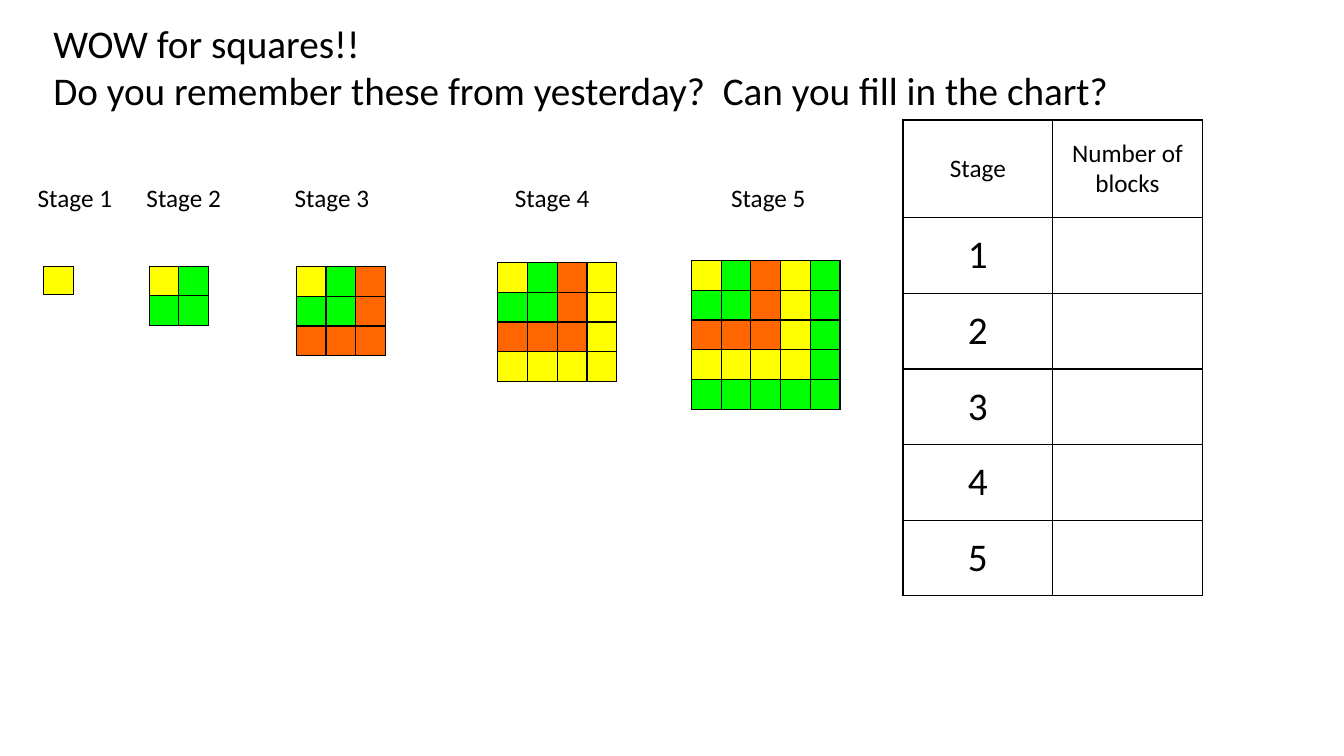
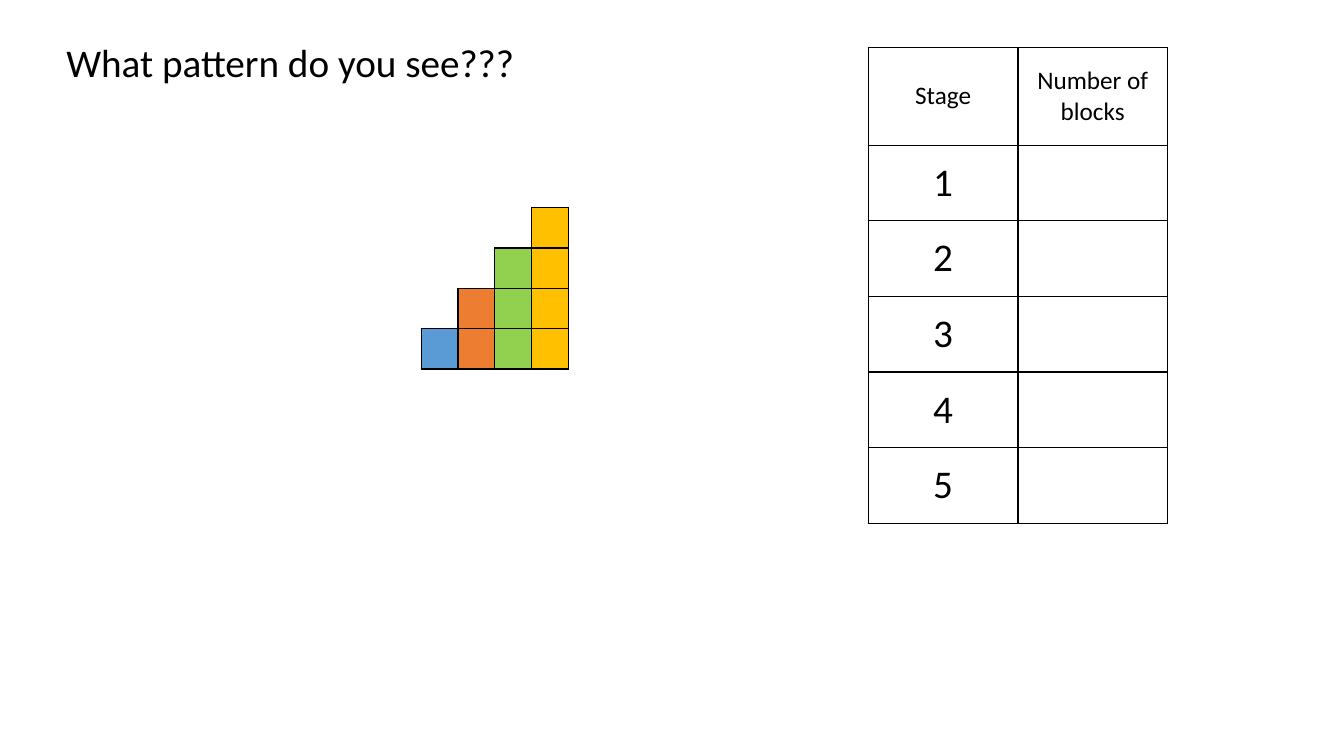
import lxml.etree
import pptx
import pptx.dml.color
import pptx.enum.shapes
import pptx.enum.text
import pptx.oxml.ns
import pptx.util

SCALE = 4572
HUES = {
    "ink": "000000",
    "yellow": "FFFF00",
    "green": "00FF00",
    "orange": "FF6600",
    "blue": "5B9BD5",
    "rust": "ED7D31",
    "lime": "92D050",
    "gold": "FFC000",
}
RINGS = ["yellow", "green", "orange", "yellow", "green"]
STEPS = ["blue", "rust", "lime", "gold"]
SIDE = 59


def px(n):
    return pptx.util.Emu(n * SCALE)


def hue(name):
    return pptx.dml.color.RGBColor.from_string(HUES[name])


def add(node, tag, **attrs):
    return lxml.etree.SubElement(node, pptx.oxml.ns.qn(tag), **attrs)


class Deck:
    font = "Calibri"
    large = 28
    small = 18

    def __init__(self):
        self.prs = pptx.Presentation()
        self.prs.slide_width = px(2667)
        self.prs.slide_height = px(1500)
        self.slide = None

    def page(self):
        self.slide = self.prs.slides.add_slide(self.prs.slide_layouts[6])

    def style(self, frame, size):
        for para in frame.paragraphs:
            for run in para.runs:
                run.font.name = self.font
                run.font.size = pptx.util.Pt(size)
                run.font.color.rgb = hue("ink")

    def text(self, x, y, w, h, words, size, tabs=()):
        box = self.slide.shapes.add_textbox(px(x), px(y), px(w), px(h))
        frame = box.text_frame
        frame.word_wrap = True
        frame.text = words
        self.style(frame, size)
        if tabs:
            stops = add(frame.paragraphs[0]._p.get_or_add_pPr(), "a:tabLst")
            for stop in tabs:
                add(stops, "a:tab", pos=str(px(stop)), algn="l")

    def title(self, x, y, h, words):
        self.text(x, y, 2150, h, words, self.large)

    def block(self, x, y, w, h, name):
        rect = pptx.enum.shapes.MSO_SHAPE.RECTANGLE
        shape = self.slide.shapes.add_shape(rect, px(x), px(y), px(w), px(h))
        shape.shadow.inherit = False
        shape.fill.solid()
        shape.fill.fore_color.rgb = hue(name)
        shape.line.color.rgb = hue("ink")
        shape.line.width = pptx.util.Pt(0.5)

    def table(self, x, y, cols, rows):
        frame = self.slide.shapes.add_table(
            len(rows), len(cols), px(x), px(y), px(sum(cols)), px(sum(rows)))
        table = frame.table
        table.first_row = False
        table.horz_banding = False
        for col, wide in zip(table.columns, cols):
            col.width = px(wide)
        for row, high in zip(table.rows, rows):
            row.height = px(high)
        for cell in table.iter_cells():
            self.edge(cell)
            cell.fill.background()
        return table

    def edge(self, cell):
        props = cell._tc.get_or_add_tcPr()
        for side in "LRTB":
            line = add(props, "a:ln" + side, w=str(pptx.util.Pt(1)))
            fill = add(line, "a:solidFill")
            add(fill, "a:srgbClr", val=HUES["ink"])

    def grid(self, x, y, wide, high, names):
        table = self.table(x, y, [wide] * len(names[0]), [high] * len(names))
        for r, row in enumerate(names):
            for c, name in enumerate(row):
                cell = table.cell(r, c)
                cell.margin_left = cell.margin_right = 0
                cell.margin_top = cell.margin_bottom = 0
                cell.fill.solid()
                cell.fill.fore_color.rgb = hue(name)
                add(cell.text_frame.paragraphs[0]._p, "a:endParaRPr", sz="800")

    def square(self, x, y, size):
        names = [[RINGS[max(r, c)] for c in range(size)] for r in range(size)]
        self.grid(x, y, SIDE, SIDE, names)

    def stairs(self, x, y, wide, high):
        for c, name in enumerate(STEPS):
            for r in range(c + 1):
                self.grid(x + c * wide, y - (r + 1) * high, wide, high, [[name]])

    def chart(self, x, y):
        table = self.table(x, y, [297, 297], [194] + [150] * 5)
        self.label(table.cell(0, 0), "Stage", self.small)
        self.label(table.cell(0, 1), "Number of blocks", self.small)
        for stage in range(1, 6):
            self.label(table.cell(stage, 0), str(stage), self.large)

    def label(self, cell, words, size):
        cell.vertical_anchor = pptx.enum.text.MSO_ANCHOR.MIDDLE
        cell.text_frame.text = words
        cell.text_frame.paragraphs[0].alignment = pptx.enum.text.PP_ALIGN.CENTER
        self.style(cell.text_frame, size)


def main():
    deck = Deck()

    deck.page()
    for size, (x, y) in enumerate([(296, 528), (588, 529), (988, 521), (1372, 517)], 2):
        deck.square(x, y, size)
    stages = "\t".join(f"Stage {n}" for n in range(1, 6))
    deck.text(55, 352, 1839, 114, stages, deck.small, [216, 510, 947, 1376])
    deck.title(86, 28, 208, "WOW for squares!!\n"
               "Do you remember these from yesterday?  Can you fill in the chart?")
    deck.block(86, 528, 60, 57, "yellow")
    deck.chart(1792, 238)

    deck.page()
    deck.stairs(836, 732, 73, 80)
    deck.chart(1723, 94)
    deck.title(112, 66, 114, "What pattern do you see???")

    deck.prs.save("out.pptx")


if __name__ == "__main__":
    main()
